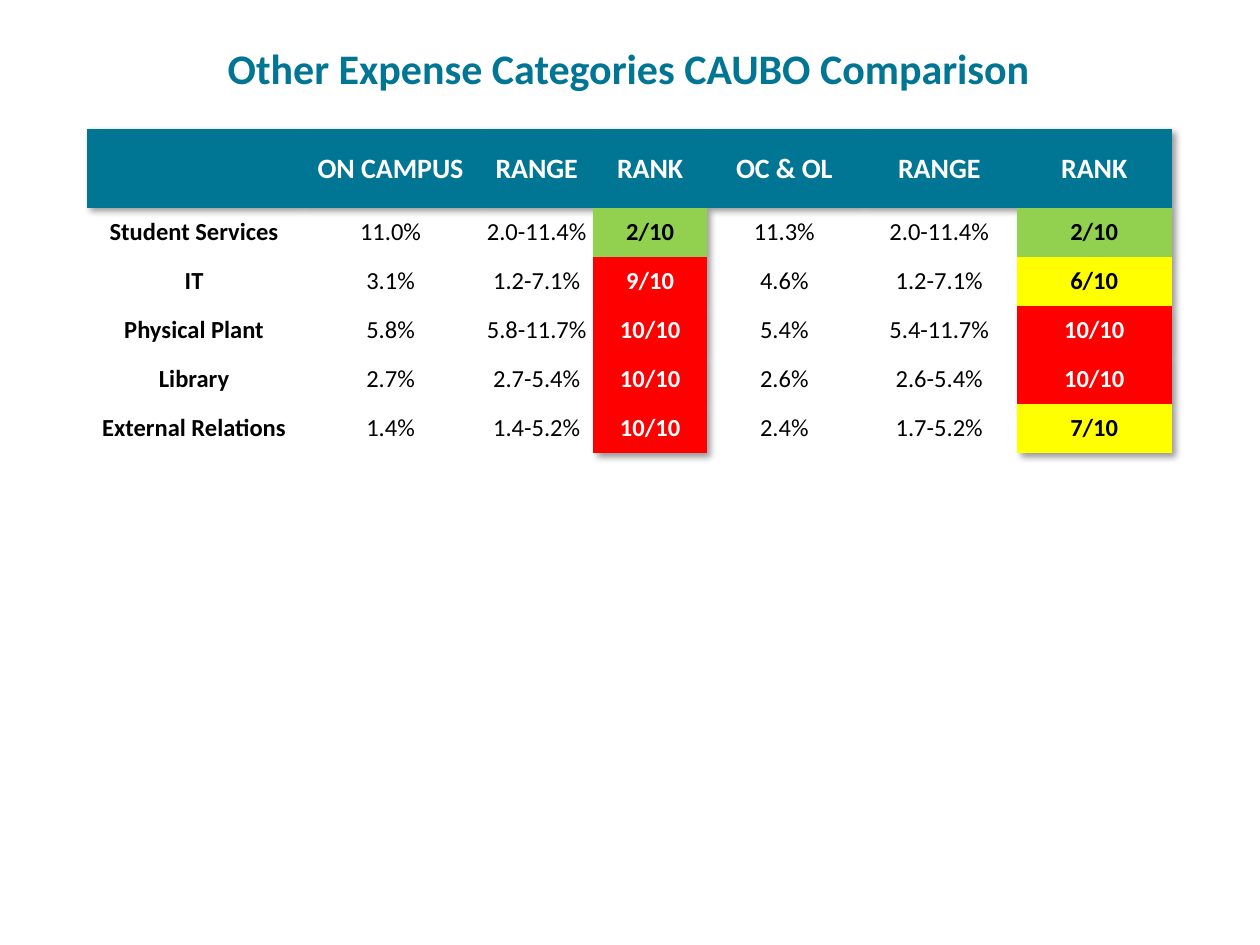
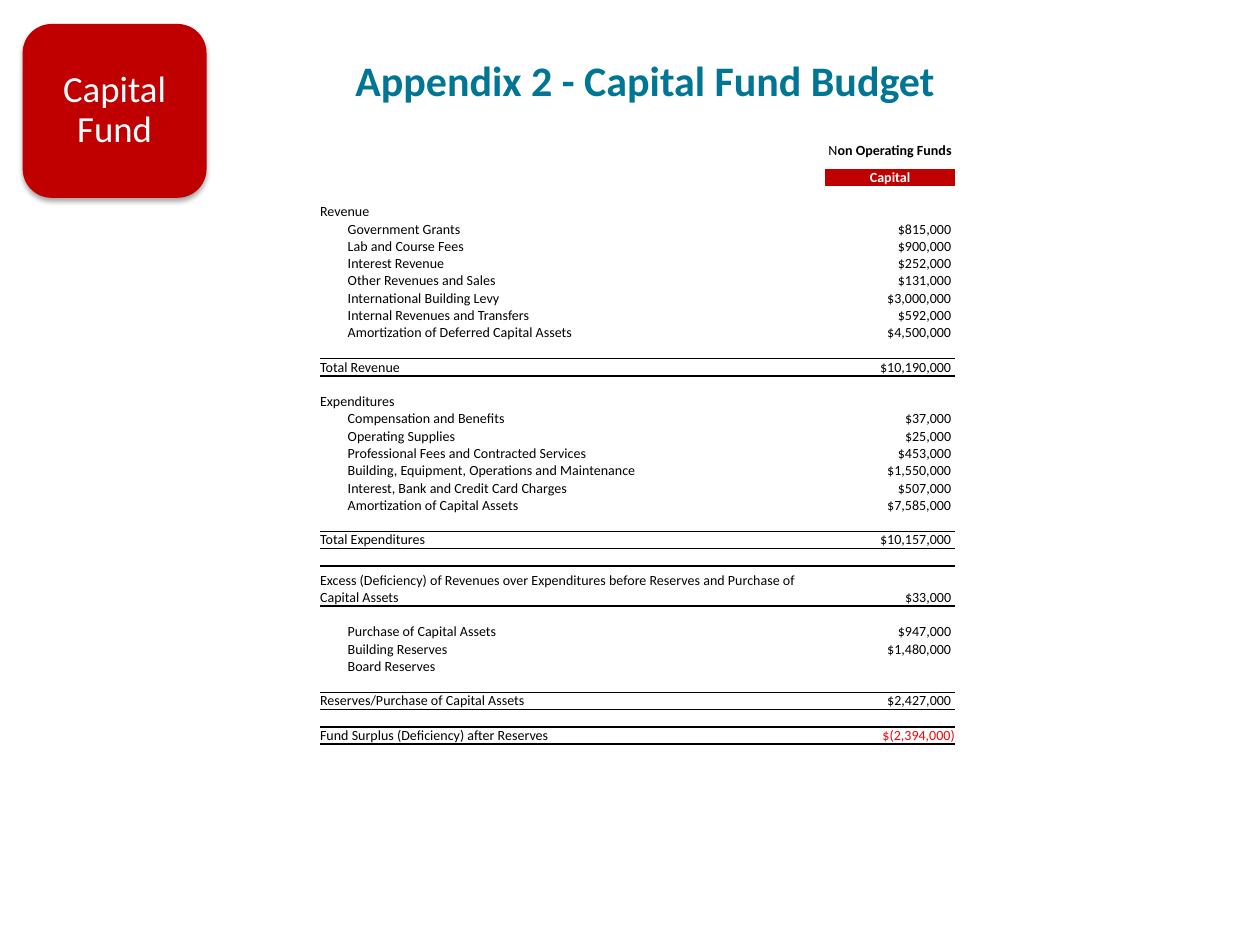
from dataclasses import dataclass

from lxml import etree
from pptx import Presentation
from pptx.dml.color import RGBColor
from pptx.enum.shapes import MSO_SHAPE
from pptx.enum.text import MSO_ANCHOR as ANCHOR, MSO_AUTO_SIZE as AUTO, PP_ALIGN as ALIGN
from pptx.oxml.ns import qn
from pptx.util import Inches, Pt

COLORS = {
    "teal": "007694", "white": "FFFFFF", "black": "000000", "badge": "C00000",
    "green": "92D050", "yellow": "FFFF00", "red": "FF0000",
}
FONT = "Calibri"
NO_STYLE = "{2D5ABB26-0587-4C30-8999-92F81FD0307C}"


@dataclass
class Box:
    left: float
    top: float
    width: float
    height: float

    def emu(self) -> tuple:
        return tuple(Inches(v) for v in (self.left, self.top, self.width, self.height))


@dataclass
class Style:
    size: float
    color: str = "black"
    bold: bool = False
    align: ALIGN = ALIGN.CENTER
    anchor: ANCHOR = ANCHOR.MIDDLE
    spacing: float = 1.0
    fill: str = ""


@dataclass
class BudgetRow:
    label: str = ""
    amount: str = ""
    indent: bool = False
    ruled: bool = False
    height: float = 0.13


def rgb(name: str) -> RGBColor:
    return RGBColor.from_string(COLORS[name])


def format_runs(p, style: Style) -> None:
    p.alignment = style.align
    p.line_spacing = style.spacing
    for r in p.runs:
        r.font.name, r.font.size, r.font.bold = FONT, Pt(style.size), style.bold
        r.font.color.rgb = rgb(style.color)
    if not p.runs:
        etree.SubElement(p._p, qn("a:endParaRPr"), sz=str(int(style.size * 100)))


def add_shadow(effects, blur: float, dist: float, angle: int, alpha: int) -> None:
    shadow = etree.SubElement(
        effects, qn("a:outerShdw"), blurRad=str(Pt(blur)), dist=str(Pt(dist)),
        dir=str(angle * 60000), algn="tl", rotWithShape="0")
    color = etree.SubElement(shadow, qn("a:srgbClr"), val=COLORS["black"])
    etree.SubElement(color, qn("a:alpha"), val=str(alpha * 1000))


def add_title(slide, text: str, box: Box) -> None:
    sp = slide.shapes.title
    sp.left, sp.top, sp.width, sp.height = box.emu()
    tf = sp.text_frame
    tf.text = text
    tf.auto_size = AUTO.NONE
    tf.vertical_anchor = ANCHOR.TOP
    format_runs(tf.paragraphs[0], Style(24, "teal", True))
    tf.paragraphs[0].space_after = Pt(6)


def add_plain_table(slide, box: Box, widths: list, heights: list):
    table = slide.shapes.add_table(len(heights), len(widths), *box.emu()).table
    table.first_row = table.horz_banding = False
    table._tbl.tblPr.find(qn("a:tableStyleId")).text = NO_STYLE
    for column, width in zip(table.columns, widths):
        column.width = Inches(width)
    for row, height in zip(table.rows, heights):
        row.height = Inches(height)
    return table


def fill_cell(cell, text: str, style: Style, inset: float = 0) -> None:
    cell.text_frame.text = text
    cell.vertical_anchor = style.anchor
    cell.margin_left = cell.margin_right = cell.margin_top = Inches(inset)
    cell.margin_bottom = 0
    format_runs(cell.text_frame.paragraphs[0], style)
    if style.fill:
        cell.fill.solid()
        cell.fill.fore_color.rgb = rgb(style.fill)
    else:
        cell.fill.background()


def rule_cell(cell) -> None:
    props = cell._tc.get_or_add_tcPr()
    for index, side in enumerate(("a:lnT", "a:lnB")):
        line = etree.Element(qn(side), w=str(Pt(1)))
        solid = etree.SubElement(line, qn("a:solidFill"))
        etree.SubElement(solid, qn("a:srgbClr"), val=COLORS["black"])
        props.insert(index, line)


HEADINGS = ["", "ON CAMPUS", "RANGE", "RANK", "OC & OL", "RANGE", "RANK"]
EXPENSES = [
    ["Student Services", "11.0%", "2.0-11.4%", "2/10", "11.3%", "2.0-11.4%", "2/10"],
    ["IT", "3.1%", "1.2-7.1%", "9/10", "4.6%", "1.2-7.1%", "6/10"],
    ["Physical Plant", "5.8%", "5.8-11.7%", "10/10", "5.4%", "5.4-11.7%", "10/10"],
    ["Library", "2.7%", "2.7-5.4%", "10/10", "2.6%", "2.6-5.4%", "10/10"],
    ["External Relations", "1.4%", "1.4-5.2%", "10/10", "2.4%", "1.7-5.2%", "7/10"],
]


def expense_style(column: int, text: str) -> Style:
    style = Style(14, bold=column == 0, spacing=0.8)
    if "/" in text:
        rank = int(text.split("/")[0])
        style.bold = True
        style.fill = "green" if rank <= 5 else "yellow" if rank <= 7 else "red"
        style.color = "white" if style.fill == "red" else "black"
    return style


def build_comparison(slide) -> None:
    add_title(slide, "Other Expense Categories CAUBO Comparison", Box(0.69, 0.29, 8.6, 0.5))
    table = add_plain_table(
        slide, Box(0.69, 1.02, 8.6, 2.59),
        [1.7, 1.42, 0.9, 0.9, 1.23, 1.23, 1.23], [0.63] + [0.39] * len(EXPENSES))
    effects = etree.Element(qn("a:effectLst"))
    table._tbl.tblPr.insert(0, effects)
    add_shadow(effects, 4, 3, 45, 40)
    for c, heading in enumerate(HEADINGS):
        fill_cell(table.cell(0, c), heading, Style(16, "white", True, fill="teal"), 0.01)
    for r, values in enumerate(EXPENSES, start=1):
        for c, text in enumerate(values):
            fill_cell(table.cell(r, c), text, expense_style(c, text), 0.01)


def items(*pairs: tuple) -> list:
    return [BudgetRow(label, amount, indent=True) for label, amount in pairs]


def total(label: str, amount: str, height: float = 0.13) -> BudgetRow:
    return BudgetRow(label, amount, ruled=True, height=height)


BLANK = BudgetRow()
BUDGET = [
    BudgetRow(amount="Non Operating Funds", height=0.29),
    BudgetRow(amount="Capital"),
    BLANK,
    BudgetRow("Revenue"),
    *items(
        ("Government Grants", "$815,000"),
        ("Lab and Course Fees", "$900,000"),
        ("Interest Revenue", "$252,000"),
        ("Other Revenues and Sales", "$131,000"),
        ("International Building Levy", "$3,000,000"),
        ("Internal Revenues and Transfers", "$592,000"),
        ("Amortization of Deferred Capital Assets", "$4,500,000")),
    BLANK,
    total("Total Revenue", "$10,190,000"),
    BLANK,
    BudgetRow("Expenditures"),
    *items(
        ("Compensation and Benefits", "$37,000"),
        ("Operating Supplies", "$25,000"),
        ("Professional Fees and Contracted Services", "$453,000"),
        ("Building, Equipment, Operations and Maintenance", "$1,550,000"),
        ("Interest, Bank and Credit Card Charges", "$507,000"),
        ("Amortization of Capital Assets", "$7,585,000")),
    BLANK,
    total("Total Expenditures", "$10,157,000"),
    BLANK,
    total("Excess (Deficiency) of Revenues over Expenditures before Reserves and "
          "Purchase of Capital Assets", "$33,000", 0.32),
    BLANK,
    *items(
        ("Purchase of Capital Assets", "$947,000"),
        ("Building Reserves", "$1,480,000"),
        ("Board Reserves", "")),
    BLANK,
    total("Reserves/Purchase of Capital Assets", "$2,427,000"),
    BLANK,
    total("Fund Surplus (Deficiency) after Reserves", "$(2,394,000)"),
]


def add_badge(slide, text: str, box: Box) -> None:
    sp = slide.shapes.add_shape(MSO_SHAPE.ROUNDED_RECTANGLE, *box.emu())
    sp.fill.solid()
    sp.fill.fore_color.rgb = rgb("badge")
    sp.line.fill.background()
    sp.shadow.inherit = False
    add_shadow(sp._element.spPr.find(qn("a:effectLst")), 3.1, 1.8, 90, 35)
    tf = sp.text_frame
    tf.text = text
    tf.word_wrap = True
    tf.margin_left = tf.margin_right = Inches(0.01)
    tf.vertical_anchor = ANCHOR.MIDDLE
    format_runs(tf.paragraphs[0], Style(21, "white", spacing=0.9))


def fill_budget_row(table, r: int, row: BudgetRow) -> None:
    label_style = Style(8, align=ALIGN.LEFT, anchor=ANCHOR.BOTTOM)
    amount_style = Style(8, align=ALIGN.RIGHT, anchor=ANCHOR.BOTTOM)
    if "(" in row.amount:
        amount_style.color = "red"
    fill_cell(table.cell(r, 0), "" if row.indent else row.label, label_style)
    fill_cell(table.cell(r, 1), row.label if row.indent else "", label_style)
    fill_cell(table.cell(r, 2), row.amount, amount_style)
    if not row.amount.endswith(")"):
        table.cell(r, 2).margin_right = Inches(0.03)
    if row.ruled:
        for c in range(3):
            rule_cell(table.cell(r, c))
    if row.label and not row.indent:
        table.cell(r, 0).merge(table.cell(r, 1))


def build_capital_fund(slide) -> None:
    add_title(slide, "Appendix 2 - Capital Fund Budget", Box(1.8, 0.38, 6.64, 0.5))
    add_badge(slide, "Capital Fund", Box(0.18, 0.19, 1.46, 1.38))
    table = add_plain_table(
        slide, Box(2.54, 1.05, 5.04, 4.74), [0.22, 3.79, 1.03], [row.height for row in BUDGET])
    for r, row in enumerate(BUDGET):
        fill_budget_row(table, r, row)
    fill_cell(table.cell(0, 2), "N", Style(8))
    p = table.cell(0, 2).text_frame.paragraphs[0]
    p.add_run().text = "on Operating Funds"
    format_runs(p, Style(8, bold=True))
    p.runs[0].font.bold = False
    fill_cell(table.cell(1, 2), "Capital",
              Style(8, "white", True, anchor=ANCHOR.BOTTOM, fill="badge"))


def main() -> None:
    prs = Presentation()
    prs.slide_width, prs.slide_height = Inches(10), Inches(7.5)
    for build in (build_comparison, build_capital_fund):
        build(prs.slides.add_slide(prs.slide_layouts[5]))
    prs.save("out.pptx")


if __name__ == "__main__":
    main()
